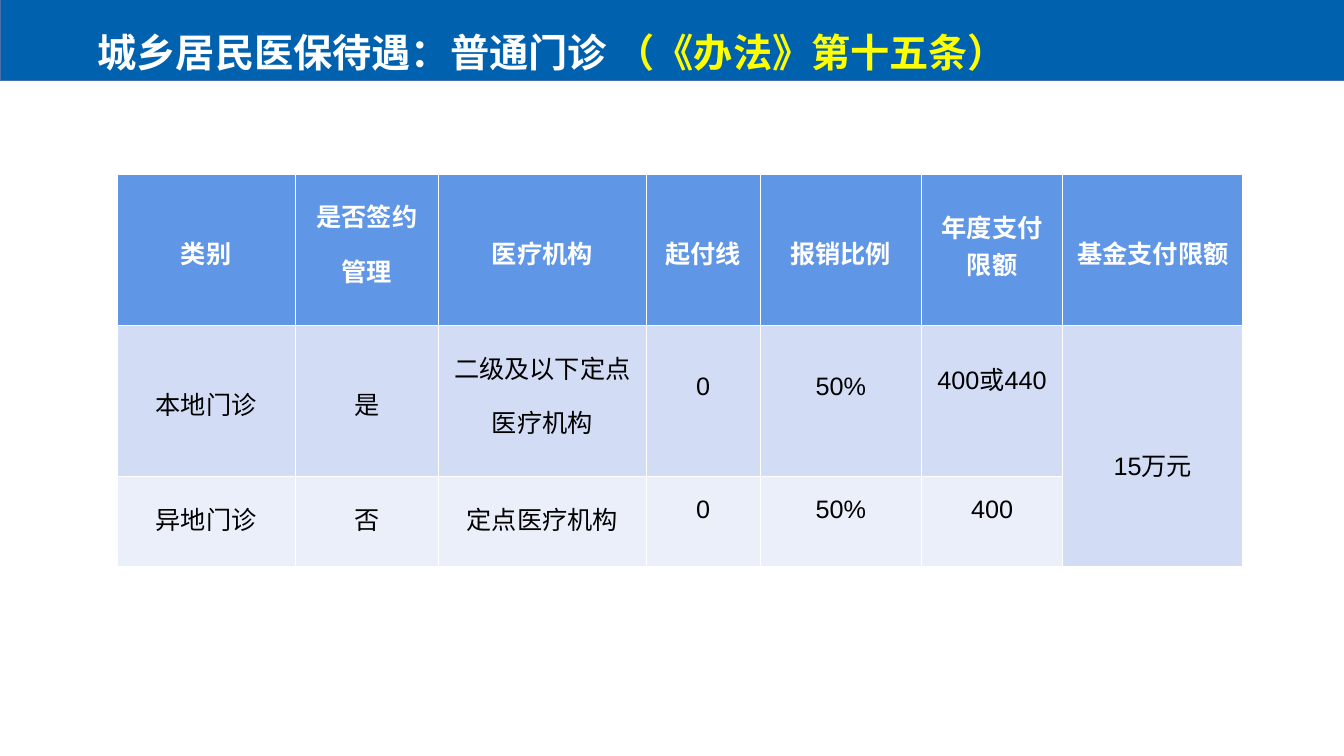
from pptx import Presentation
from pptx.dml.color import RGBColor as RGB
from pptx.enum.shapes import MSO_SHAPE as SHAPE
from pptx.enum.text import MSO_ANCHOR as ANCHOR, PP_ALIGN as ALIGN
from pptx.oxml.ns import qn
from pptx.util import Inches, Pt
from lxml import etree

COLORS = {"banner": "0061AE", "banner_line": "476FAA", "white": "FFFFFF",
          "yellow": "FFFF00", "black": "000000", "header": "6096E6",
          "local": "D2DDF5", "remote": "EAEFFA"}
TITLE_FONT, TABLE_FONT = "Noto Sans CJK SC", "Arial"

COL_WIDTHS = [1.77, 1.42, 2.06, 1.13, 1.6, 1.4, 1.79]
ROW_HEIGHTS = [1.5, 1.5, 0.89]
ROW_FILLS = ["header", "local", "remote"]
ROWS = [
    ["类别", "是否签约管理", "医疗机构", "起付线", "报销比例", "年度支付限额", "基金支付限额"],
    ["本地门诊", "是", "二级及以下定点医疗机构", "0", "50%", "400或440", "15万元"],
    ["异地门诊", "否", "定点医疗机构", "0", "50%", "400", ""],
]
LINE_SPACINGS = [
    [2.5, 1.5, 2.5, 2.5, 2.5, 1, 2.5],
    [2.5, 2.5, 1.5, 2.5, 2.5, 1, 1],
    [1.5] * 7,
]
TOP_MARGINS = {(0, 5): 0.34, (1, 5): 0.34, (1, 6): 1.2}


def color(name):
    return RGB.from_string(COLORS[name])


def set_font(font, name, size, bold):
    font.name, font.size, font.bold = name, Pt(size), bold


def add_banner(s, x, y, w, h):
    bar = s.shapes.add_shape(SHAPE.RECTANGLE, Inches(x), Inches(y), Inches(w), Inches(h))
    bar.shadow.inherit = False
    bar.fill.solid()
    bar.fill.fore_color.rgb = color("banner")
    bar.line.color.rgb = color("banner_line")
    bar.line.width = Pt(1)

    title = s.shapes.add_textbox(Inches(x + 0.87), Inches(y + 0.22), Inches(9.39), Inches(0.61))
    tf = title.text_frame
    tf.word_wrap = False
    tf.vertical_anchor = ANCHOR.MIDDLE
    p = tf.paragraphs[0]
    set_font(p.font, TITLE_FONT, 28, True)
    for text, name in [("城乡居民医保待遇：普通门诊 ", "white"), ("（《办法》第十五条）", "yellow")]:
        r = p.add_run()
        r.text = text
        r.font.color.rgb = color(name)
        etree.SubElement(r.font._element, qn("a:ea"), typeface=TITLE_FONT)


def add_benefit_table(s, x, y):
    """Place the table; the default table style supplies its white rules."""
    frame = s.shapes.add_table(len(ROWS), len(COL_WIDTHS), Inches(x), Inches(y),
                               Inches(sum(COL_WIDTHS)), Inches(sum(ROW_HEIGHTS)))
    table = frame.table
    for column, width in zip(table.columns, COL_WIDTHS):
        column.width = Inches(width)
    for row, height in zip(table.rows, ROW_HEIGHTS):
        row.height = Inches(height)
    for i, texts in enumerate(ROWS):
        for j, text in enumerate(texts):
            cell = table.cell(i, j)
            cell.fill.solid()
            cell.fill.fore_color.rgb = color(ROW_FILLS[i])
            cell.margin_top = Inches(TOP_MARGINS.get((i, j), 0.05))
            p = cell.text_frame.paragraphs[0]
            p.text = text
            p.alignment = ALIGN.CENTER
            p.line_spacing = float(LINE_SPACINGS[i][j])
            set_font(p.font, TABLE_FONT, 18, i == 0)
            p.font.color.rgb = color("black" if i else "white")
    table.cell(1, 6).merge(table.cell(2, 6))


def main():
    prs = Presentation()
    prs.slide_width, prs.slide_height = Inches(13.33), Inches(7.5)
    s = prs.slides.add_slide(prs.slide_layouts[6])
    add_banner(s, 0, -0.01, 13.38, 0.81)
    add_benefit_table(s, 1.16, 1.73)
    prs.save("out.pptx")


if __name__ == "__main__":
    main()
